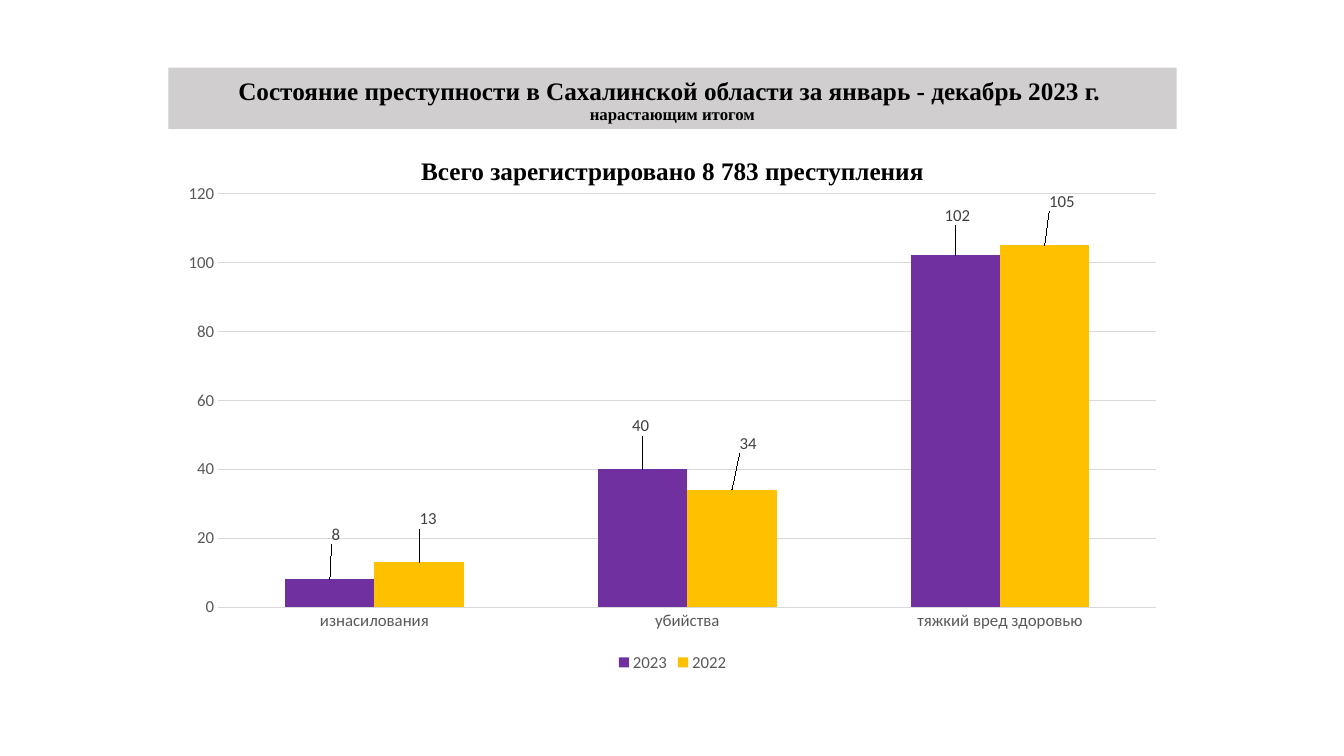
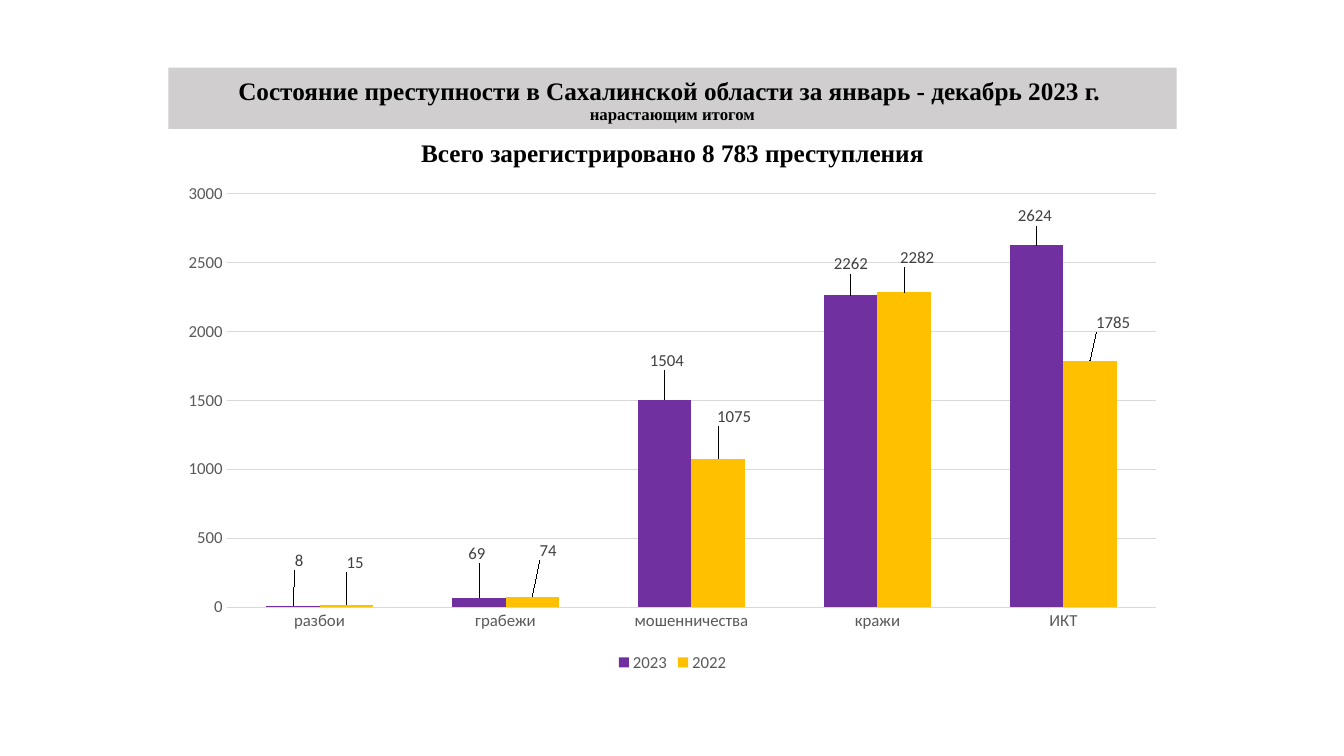
from dataclasses import dataclass

import lxml.etree
import pptx
import pptx.chart.data
import pptx.dml.color
import pptx.enum.chart
import pptx.enum.shapes
import pptx.enum.text
import pptx.oxml.ns
import pptx.util
from pptx.util import Inches


@dataclass(frozen=True)
class Theme:
    band: str = "D0CECE"
    heading: str = "000000"
    axis: str = "595959"
    label: str = "404040"
    grid: str = "D9D9D9"
    series: tuple[str, ...] = ("7030A0", "FFC000")
    title_font: str = "Times New Roman"
    chart_font: str = "Calibri"
    title_size: int = 18
    note_size: int = 12
    chart_size: int = 12


@dataclass(frozen=True)
class Series:
    name: str
    values: tuple[int, ...]
    label_shifts: tuple[tuple[float, float], ...]


@dataclass(frozen=True)
class CrimeSlide:
    subtitle_top: float
    categories: tuple[str, ...]
    series: tuple[Series, ...]


THEME = Theme()
LEFT, WIDTH = 1.67, 10
CHART_TOP, CHART_HEIGHT = 1.72, 4.99
TITLE = "Состояние преступности в Сахалинской области за январь - декабрь 2023 г. "
NOTE = "нарастающим итогом"
SUBTITLE = "Всего зарегистрировано 8 783 преступления"

SLIDES = (
    CrimeSlide(
        1.55,
        ("изнасилования", "убийства", "тяжкий вред здоровью"),
        (
            Series("2023", (8, 40, 102), ((0.06, -0.31), (-0.02, -0.29), (0.02, -0.26))),
            Series("2022", (13, 34, 105), ((0.09, -0.29), (0.16, -0.32), (0.17, -0.29))),
        ),
    ),
    CrimeSlide(
        1.37,
        ("разбои", "грабежи", "мошенничества", "кражи", "ИКТ"),
        (
            Series(
                "2023",
                (8, 69, 1504, 2262, 2624),
                ((0.06, -0.31), (-0.02, -0.3), (0.02, -0.25), (0, -0.17), (-0.02, -0.15)),
            ),
            Series(
                "2022",
                (15, 74, 1075, 2282, 1785),
                ((0.09, -0.28), (0.16, -0.32), (0.16, -0.28), (0.13, -0.21), (0.23, -0.24)),
            ),
        ),
    ),
)


def rgb(color: str) -> pptx.dml.color.RGBColor:
    return pptx.dml.color.RGBColor.from_string(color)


def style_font(font, name: str, size: int, color: str, bold: bool = False) -> None:
    font.name = name
    font.size = pptx.util.Pt(size)
    font.bold = bold
    font.color.rgb = rgb(color)


def add_heading_run(p, text: str, size: int) -> None:
    r = p.add_run()
    r.text = text
    style_font(r.font, THEME.title_font, size, THEME.heading, True)


def add_title(s) -> None:
    sp = s.shapes.add_shape(
        pptx.enum.shapes.MSO_SHAPE.RECTANGLE,
        Inches(LEFT), Inches(0.67), Inches(WIDTH), Inches(0.61),
    )
    sp.shadow.inherit = False
    sp.fill.solid()
    sp.fill.fore_color.rgb = rgb(THEME.band)
    sp.line.fill.background()
    tf = sp.text_frame
    tf.word_wrap = True
    tf.vertical_anchor = pptx.enum.text.MSO_ANCHOR.BOTTOM
    p = tf.paragraphs[0]
    p.alignment = pptx.enum.text.PP_ALIGN.CENTER
    p.line_spacing = 0.9
    add_heading_run(p, TITLE, THEME.title_size)
    p.add_line_break()
    add_heading_run(p, NOTE, THEME.note_size)


def add_subtitle(s, top: float) -> None:
    sp = s.shapes.add_textbox(Inches(LEFT), Inches(top), Inches(WIDTH), Inches(0.36))
    tf = sp.text_frame
    tf.word_wrap = True
    p = tf.paragraphs[0]
    p.alignment = pptx.enum.text.PP_ALIGN.CENTER
    p.line_spacing = 0.8
    p.space_before = pptx.util.Pt(10)
    add_heading_run(p, SUBTITLE, THEME.title_size)


def shift_label(series, index: int, dx: float, dy: float) -> None:
    label = series.points[index].data_label
    style_font(label.font, THEME.chart_font, THEME.chart_size, THEME.label)
    label.position = pptx.enum.chart.XL_LABEL_POSITION.OUTSIDE_END
    qn = pptx.oxml.ns.qn
    idx = series.data_labels._element.xpath(f"c:dLbl/c:idx[@val='{index}']")[0]
    layout = lxml.etree.Element(qn("c:layout"))
    manual = lxml.etree.SubElement(layout, qn("c:manualLayout"))
    for tag, value in (("c:x", dx / WIDTH), ("c:y", dy / CHART_HEIGHT)):
        lxml.etree.SubElement(manual, qn(tag)).set("val", f"{value:.4f}")
    idx.addnext(layout)


def style_axis(axis) -> None:
    style_font(axis.tick_labels.font, THEME.chart_font, THEME.chart_size, THEME.axis)
    axis.major_tick_mark = pptx.enum.chart.XL_TICK_MARK.NONE
    axis.minor_tick_mark = pptx.enum.chart.XL_TICK_MARK.NONE
    axis.format.line.fill.background()


def add_columns(s, content: CrimeSlide) -> None:
    data = pptx.chart.data.CategoryChartData()
    data.categories = content.categories
    for item in content.series:
        data.add_series(item.name, item.values)
    chart = s.shapes.add_chart(
        pptx.enum.chart.XL_CHART_TYPE.COLUMN_CLUSTERED,
        Inches(LEFT), Inches(CHART_TOP), Inches(WIDTH), Inches(CHART_HEIGHT), data,
    ).chart
    chart.has_title = False
    style_font(chart.font, THEME.chart_font, THEME.chart_size, THEME.axis)
    chart.has_legend = True
    chart.legend.position = pptx.enum.chart.XL_LEGEND_POSITION.BOTTOM
    chart.legend.include_in_layout = False
    style_font(chart.legend.font, THEME.chart_font, THEME.chart_size, THEME.axis)

    style_axis(chart.category_axis)
    style_axis(chart.value_axis)
    chart.value_axis.has_major_gridlines = True
    grid = chart.value_axis.major_gridlines.format.line
    grid.color.rgb = rgb(THEME.grid)
    grid.width = pptx.util.Pt(0.75)

    plot = chart.plots[0]
    plot.gap_width = 150
    plot.overlap = 0
    plot.vary_by_categories = False
    for series, item, color in zip(plot.series, content.series, THEME.series):
        series.format.fill.solid()
        series.format.fill.fore_color.rgb = rgb(color)
        series.invert_if_negative = False
        labels = series.data_labels
        labels.show_value = True
        labels.position = pptx.enum.chart.XL_LABEL_POSITION.OUTSIDE_END
        style_font(labels.font, THEME.chart_font, THEME.chart_size, THEME.label)
        for index, (dx, dy) in enumerate(item.label_shifts):
            shift_label(series, index, dx, dy)


def main() -> None:
    prs = pptx.Presentation()
    prs.slide_width = Inches(13.33)
    prs.slide_height = Inches(7.5)
    for content in SLIDES:
        s = prs.slides.add_slide(prs.slide_layouts[6])
        add_title(s)
        add_subtitle(s, content.subtitle_top)
        add_columns(s, content)
    prs.save("out.pptx")


if __name__ == "__main__":
    main()
